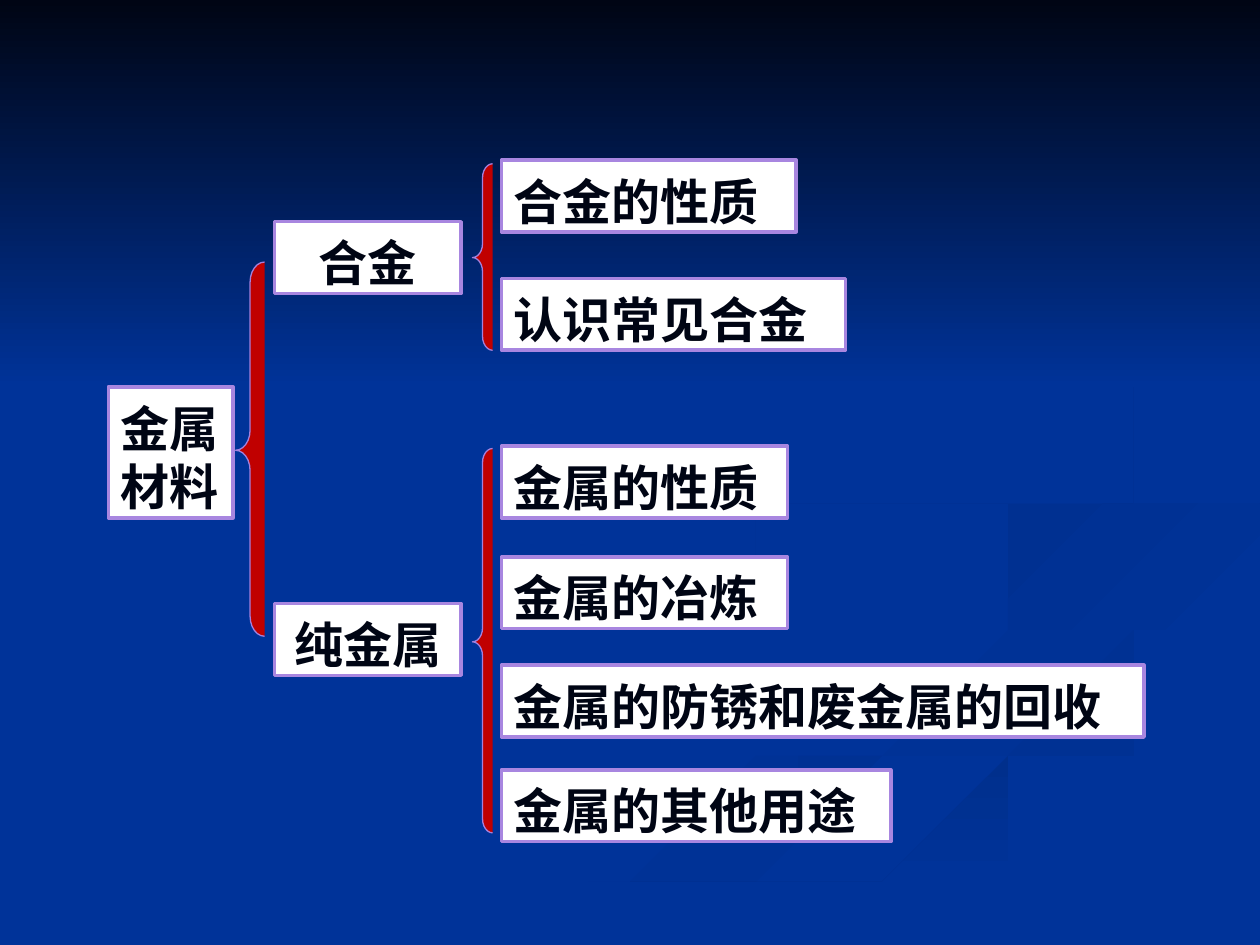
from lxml import etree
from pptx import Presentation
from pptx.dml.color import RGBColor
from pptx.enum.shapes import MSO_SHAPE
from pptx.enum.text import MSO_ANCHOR, PP_ALIGN
from pptx.oxml.ns import qn
from pptx.util import Inches, Pt

RECTANGLE, BRACE = MSO_SHAPE.RECTANGLE, MSO_SHAPE.LEFT_BRACE
MIDDLE, LEFT, CENTER = MSO_ANCHOR.MIDDLE, PP_ALIGN.LEFT, PP_ALIGN.CENTER
WIDTH, HEIGHT = 10, 7.5
FONT, SIZE = "Noto Sans CJK SC", 28
BLUE, INK, WHITE, RED = "003399", "000514", "FFFFFF", "C00000"
BOX_LINE, BRACE_LINE = "A886E0", "A481DD"
ROW = 0.57
LABEL_LEFT, LABEL_WIDTH = 2.18, 1.48
BRACE_LEFT, BRACE_WIDTH = 3.75, 0.16
LEAF_LEFT = 3.98
STEPS = 5

WAVES = [
    (BLUE, "003193", 0,
     [(5.75, 4.59), (6.14, 4.96), (7.45, 5.38), (8, 5.81), (6.51, 6.4), (3.61, 7.49)],
     [(3, 7.49), (4.99, 6.61), (7.67, 5.87), (7.62, 5.47), (6.02, 4.95), (5.75, 4.59)]),
    (BLUE, "003193", 45,
     [(7.24, 4.64), (7.58, 4.98), (9.05, 5.4), (9.43, 5.7), (8.94, 6.05)],
     [(8.94, 6.05), (9.17, 5.76), (8.38, 5.36), (7.46, 5), (7.24, 4.64)]),
    ("002F8C", BLUE, 90,
     [(5.03, 7.49), (6.3, 6.93), (7.97, 6.38), (9.98, 5.81)],
     [(9.98, 6.09), (7.85, 6.61), (6.49, 7.1), (5.71, 7.49)]),
    ("003091", BLUE, 45,
     [(8.26, 4.96), (7.81, 4.6), (8.35, 4.3), (9.98, 4.02)],
     [(9.98, 4.2), (8.59, 4.43), (8.05, 4.72), (8.26, 4.96)]),
    ("002F8E", BLUE, 45,
     [(7.62, 2.33), (8.54, 2.83), (8.94, 3.44), (8.25, 4.02), (6.49, 4.36),
      (5.94, 4.7), (6.22, 5)],
     [(6.22, 5), (5.77, 4.62), (6.49, 4.2), (8.18, 3.86), (8.89, 3.35),
      (8.46, 2.79), (7.62, 2.33)]),
]

BRANCHES = [
    ("合金", 1.76, (1.3, 1.48),
     [("合金的性质", 1.27, 2.34), ("认识常见合金", 2.21, 2.73)]),
    ("纯金属", 4.79, (3.56, 3.05),
     [("金属的性质", 3.54, 2.27), ("金属的冶炼", 4.42, 2.27),
      ("金属的防锈和废金属的回收", 5.28, 5.1), ("金属的其他用途", 6.11, 3.09)]),
]


def color(value):
    """Turn a hex string into a colour."""
    return RGBColor.from_string(value)


def smooth_edge(points):
    """Return points along a Catmull-Rom curve through the given points."""
    padded = [points[0], *points, points[-1]]
    curve = []
    for before, start, end, after in zip(padded, padded[1:], padded[2:], padded[3:]):
        for step in range(STEPS):
            t = step / STEPS
            curve.append(tuple(
                b + ((c - a) * t + (2 * a - 5 * b + 4 * c - d) * t ** 2
                     + (3 * b - a - 3 * c + d) * t ** 3) / 2
                for a, b, c, d in zip(before, start, end, after)))
    return curve + [points[-1]]


def paint_gradient(shape, start, end, angle):
    """Fill a borderless shape with a two-colour gradient, angle clockwise."""
    shape.shadow.inherit = False
    shape.line.fill.background()
    shape.fill.gradient()
    shape.fill.gradient_angle = -angle % 360
    for stop, value, position in zip(shape.fill.gradient_stops, (start, end), (0, 1)):
        stop.color.rgb = color(value)
        stop.position = position


def add_shape(page, kind, box, fill, line, weight):
    """Add a filled and outlined preset shape in a box given in inches."""
    shape = page.shapes.add_shape(kind, *map(Inches, box))
    shape.shadow.inherit = False
    shape.fill.solid()
    shape.fill.fore_color.rgb = color(fill)
    shape.line.color.rgb = color(line)
    shape.line.width = Pt(weight)
    return shape


def add_brace(page, box):
    """Add a red left brace."""
    brace = add_shape(page, BRACE, box, RED, BRACE_LINE, 0.75)
    brace.adjustments[0] = 0.696
    brace.adjustments[1] = 0.503


def add_label(page, box, lines, align=LEFT, wrap=True):
    """Add a white box with one bold paragraph per line."""
    frame = add_shape(page, RECTANGLE, box, WHITE, BOX_LINE, 2).text_frame
    frame.word_wrap = wrap
    frame.vertical_anchor = MIDDLE
    frame.margin_top, frame.margin_bottom = Inches(0.08), 0
    for index, text in enumerate(lines):
        para = frame.add_paragraph() if index else frame.paragraphs[0]
        para.alignment = align
        para.line_spacing = Pt(33)
        span = para.add_run()
        span.text = text
        span.font.name, span.font.size, span.font.bold = FONT, Pt(SIZE), True
        span.font.color.rgb = color(INK)
        east = etree.SubElement(span.font._element, qn("a:ea"))
        east.set("typeface", FONT)


def add_backdrop(page, width, height):
    """Paint the blue ground, its waves and the dark band at the top."""
    page.background.fill.solid()
    page.background.fill.fore_color.rgb = color(BLUE)
    for start, end, angle, outward, homeward in WAVES:
        outline = smooth_edge(outward) + smooth_edge(homeward)
        builder = page.shapes.build_freeform(*outline[0], scale=Inches(1))
        builder.add_line_segments(outline[1:], close=True)
        paint_gradient(builder.convert_to_shape(), start, end, angle)
    band = page.shapes.add_shape(RECTANGLE, 0, 0, Inches(width), Inches(height * 0.41))
    paint_gradient(band, INK, BLUE, 90)


def add_branch(page, title, top, span, leaves):
    """Add a titled branch with its brace and leaves."""
    add_label(page, (LABEL_LEFT, top, LABEL_WIDTH, ROW), [title], CENTER)
    add_brace(page, (BRACE_LEFT, span[0], BRACE_WIDTH, span[1]))
    for text, leaf_top, width in leaves:
        add_label(page, (LEAF_LEFT, leaf_top, width, ROW), [text])


def main():
    """Build the concept tree slide."""
    deck = Presentation()
    deck.slide_width, deck.slide_height = Inches(WIDTH), Inches(HEIGHT)
    page = deck.slides.add_slide(deck.slide_layouts[6])
    add_backdrop(page, WIDTH, HEIGHT)
    add_label(page, (0.86, 3.07, 0.99, 1.04), ["金属", "材料"], wrap=False)
    add_brace(page, (1.87, 2.08, 0.23, 2.97))
    for branch in BRANCHES:
        add_branch(page, *branch)
    deck.save("out.pptx")


if __name__ == "__main__":
    main()
